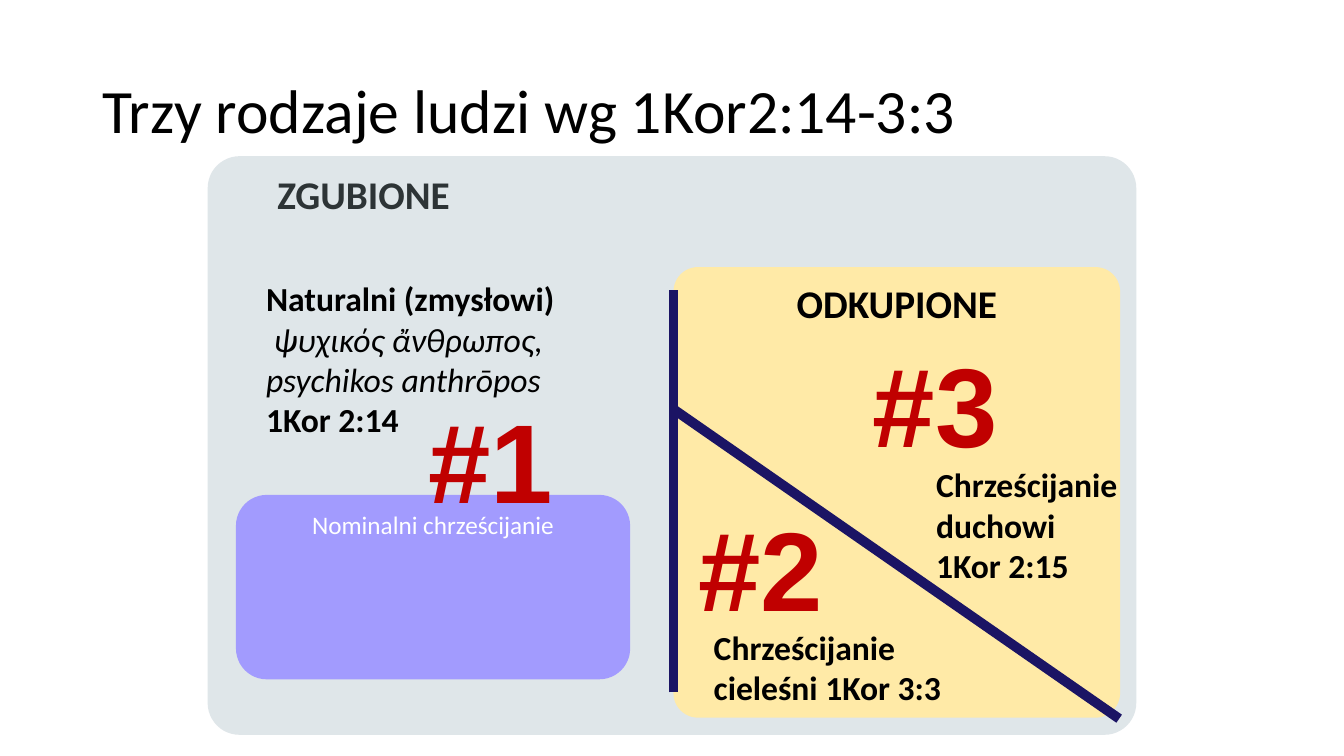
from lxml import etree
from pptx import Presentation
from pptx.dml.color import RGBColor
from pptx.enum.shapes import MSO_CONNECTOR, MSO_SHAPE
from pptx.enum.text import MSO_ANCHOR, PP_ALIGN
from pptx.oxml.ns import qn
from pptx.util import Inches, Pt

BLACK = RGBColor(0x00, 0x00, 0x00)
WHITE = RGBColor(0xFF, 0xFF, 0xFF)
SLATE = RGBColor(0x2D, 0x34, 0x36)
GREY = RGBColor(0xDF, 0xE6, 0xE9)
YELLOW = RGBColor(0xFF, 0xEA, 0xA7)
VIOLET = RGBColor(0xA2, 0x9B, 0xFE)
NAVY = RGBColor(0x1B, 0x14, 0x64)
RED = RGBColor(0xC0, 0x00, 0x00)

LEFT, CENTER = PP_ALIGN.LEFT, PP_ALIGN.CENTER

TITLE = "Trzy rodzaje ludzi wg 1Kor2:14-3:3"
TITLE_BOX = (0.92, 0.4, 11.5, 1.45)

# box, corner, fill, text, size, colour, bold, alignment
PANELS = [
    ((2.06, 1.55, 9.21, 5.74), 0.055, GREY, "\tZGUBIONE", 28, SLATE, True, LEFT),
    ((6.68, 2.65, 4.43, 4.47), 0.055, YELLOW, "ODKUPIONE", 28, BLACK, True, CENTER),
    ((2.34, 4.91, 3.91, 1.83), 0.167, VIOLET, "Nominalni chrześcijanie", 18, WHITE, False, CENTER),
    ((9.09, 4.46, 2.38, 1.49), 0.218, None, "Chrześcijanie\vduchowi\v1Kor 2:15", 24, BLACK, True, LEFT),
    ((6.86, 6.05, 3.23, 1.15), 0.36, None, "Chrześcijanie\vcieleśni 1Kor 3:3", 24, BLACK, True, LEFT),
]

DIVIDERS = [(6.68, 6.87, 6.68, 2.88), (11.1, 7.13, 6.68, 4.06)]

NUMBER_SIZE = (1.73, 1.45)
NUMBERS = [("#1", 4.15, 3.83), ("#2", 6.83, 4.91), ("#3", 8.56, 3.28)]

NATURAL_BOX = (2.54, 2.71, 3.39, 2.12)
# text, bold, italic, line break after
NATURAL = [
    ("Naturalni (zmysłowi)", True, False, True),
    (" ", True, False, False),
    ("ψυχικός ἄνθρωπος, psychikos anthrōpos", False, True, True),
    ("1Kor 2:14", True, False, False),
]


def inches(values):
    return [Inches(v) for v in values]


def style(r, size, color, bold=False, italic=False, font="Calibri"):
    r.font.name = font
    r.font.size = Pt(size)
    r.font.color.rgb = color
    r.font.bold = bold
    r.font.italic = italic


def add_text(s, box, text=""):
    """Add a wrapping text box and return its frame."""
    tf = s.shapes.add_textbox(*inches(box)).text_frame
    tf.word_wrap = True
    tf.text = text
    return tf


def add_panel(s, box, corner, fill, text, size, color, bold, align):
    sp = s.shapes.add_shape(MSO_SHAPE.ROUNDED_RECTANGLE, *inches(box))
    sp.adjustments[0] = corner
    sp.shadow.inherit = False
    sp.line.fill.background()
    if fill is None:
        sp.fill.background()
    else:
        sp.fill.solid()
        sp.fill.fore_color.rgb = fill
    tf = sp.text_frame
    tf.word_wrap = True
    tf.vertical_anchor = MSO_ANCHOR.TOP
    p = tf.paragraphs[0]
    p.text = text
    p.alignment = align
    for r in p.runs:
        style(r, size, color, bold)


def add_divider(s, ends):
    line = s.shapes.add_connector(MSO_CONNECTOR.STRAIGHT, *inches(ends))
    line.line.color.rgb = NAVY
    line.line.width = Pt(7)
    etree.SubElement(line._element.spPr, qn("a:effectLst"))


def main():
    prs = Presentation()
    prs.slide_width, prs.slide_height = Inches(13.33), Inches(7.5)
    s = prs.slides.add_slide(prs.slide_layouts[6])

    tf = add_text(s, TITLE_BOX, TITLE)
    tf.vertical_anchor = MSO_ANCHOR.MIDDLE
    p = tf.paragraphs[0]
    p.line_spacing = 0.9
    style(p.runs[0], 44, BLACK)

    for panel in PANELS:
        add_panel(s, *panel)
    for ends in DIVIDERS:
        add_divider(s, ends)
    for text, x, y in NUMBERS:
        tf = add_text(s, (x, y, *NUMBER_SIZE), text)
        style(tf.paragraphs[0].runs[0], 80, RED, True, font="Arial")

    p = add_text(s, NATURAL_BOX).paragraphs[0]
    for text, bold, italic, break_after in NATURAL:
        r = p.add_run()
        r.text = text
        style(r, 24, BLACK, bold, italic)
        if break_after:
            p.add_line_break()

    prs.save("out.pptx")


if __name__ == "__main__":
    main()
